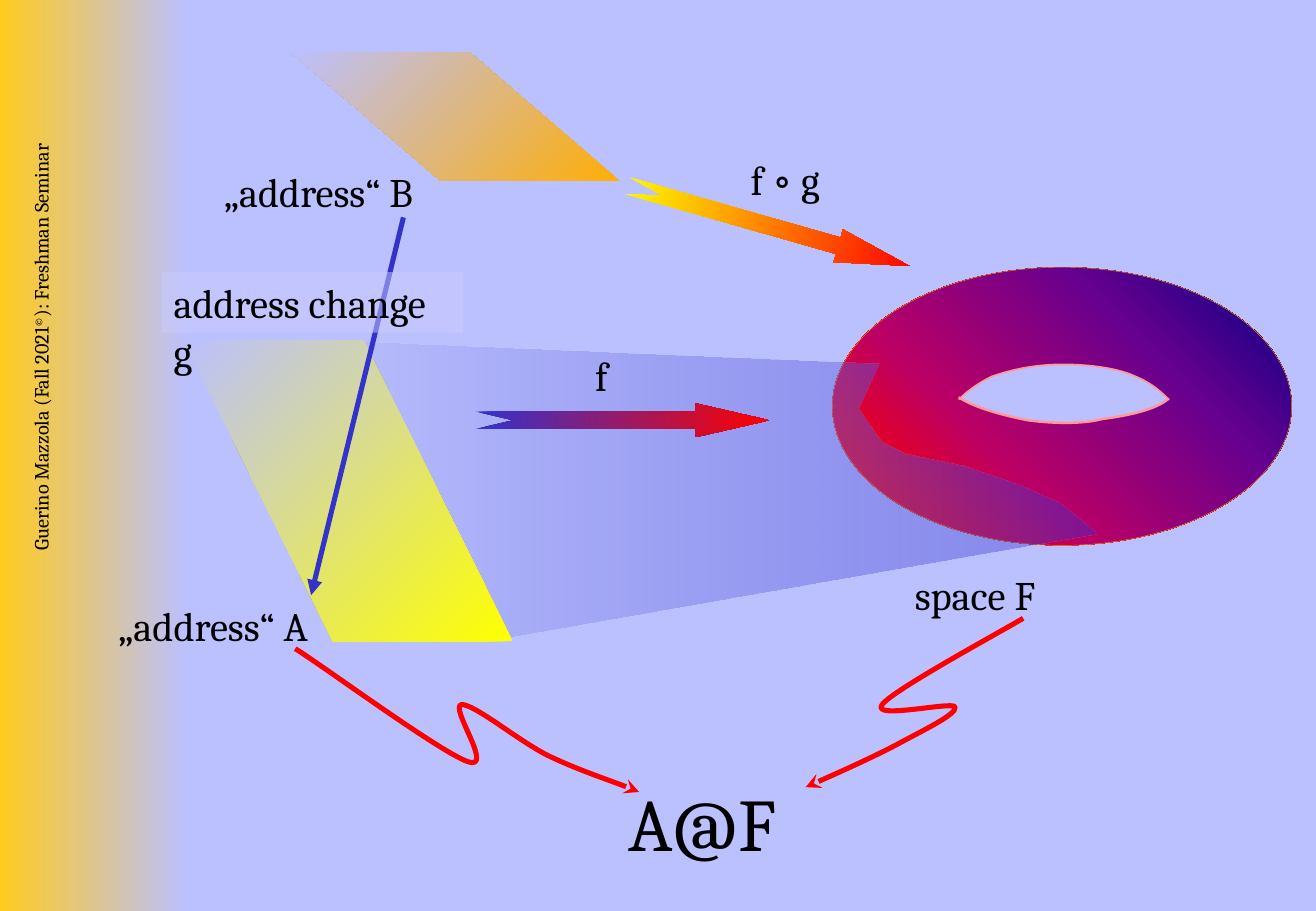
"""Build the slide on address change between addresses A and B and space F."""
from lxml import etree
from pptx import Presentation
from pptx.dml.color import RGBColor
from pptx.enum.shapes import MSO_CONNECTOR, MSO_SHAPE
from pptx.enum.text import PP_ALIGN
from pptx.oxml.ns import qn
from pptx.util import Inches, Pt

RECT, OVAL = MSO_SHAPE.RECTANGLE, MSO_SHAPE.OVAL
ARROW, PARALLELOGRAM = MSO_SHAPE.NOTCHED_RIGHT_ARROW, MSO_SHAPE.PARALLELOGRAM
STRAIGHT, RIGHT = MSO_CONNECTOR.STRAIGHT, PP_ALIGN.RIGHT
FONT, BACK = "Cambria", "BBC0FF"


def rgb(color):
    return RGBColor.from_string(color)


def paint_gradient(sp, stops, angle):
    sp.shadow.inherit = False
    sp.line.fill.background()
    sp.fill.gradient()
    sp.fill.gradient_angle = angle
    stop_list = sp._element.spPr.find(qn("a:gradFill")).find(qn("a:gsLst"))
    for old in list(stop_list):
        stop_list.remove(old)
    for position, color, alpha in stops:
        gs = etree.SubElement(stop_list, qn("a:gs"), pos=str(position * 1000))
        clr = etree.SubElement(gs, qn("a:srgbClr"), val=color)
        etree.SubElement(clr, qn("a:alpha"), val=str(alpha * 1000))


prs = Presentation()
prs.slide_width, prs.slide_height = Inches(10.83), Inches(7.5)
slide = prs.slides.add_slide(prs.slide_layouts[6])
slide.background.fill.solid()
slide.background.fill.fore_color.rgb = rgb(BACK)
shapes = slide.shapes

band = shapes.add_shape(RECT, 0, 0, Inches(1.54), prs.slide_height)
paint_gradient(band, [(0, "FFCB1F", 100), (100, BACK, 100)], 0)

credit = shapes.add_textbox(Inches(-2.39), Inches(3.66), Inches(5.65), Inches(0.5))
credit.rotation = 270
credit.text_frame.word_wrap = True
p = credit.text_frame.paragraphs[0]
p.alignment = RIGHT
for text, baseline in [("Guerino Mazzola (Fall 2021", 0), ("©", 30000), ("): Freshman Seminar", 0)]:
    r = p.add_run()
    r.text = text
    r.font.name, r.font.size, r.font.color.rgb = FONT, Pt(12), rgb("000000")
    if baseline:
        r._r.get_or_add_rPr().set("baseline", str(baseline))

torus = shapes.add_shape(OVAL, Inches(6.85), Inches(2.2), Inches(3.78), Inches(2.29))
paint_gradient(torus, [(0, "FF8200", 100), (10, "FF0000", 100), (35, "BA0066", 100),
                       (70, "66008F", 100), (100, "000082", 100)], 45)
torus.line.color.rgb, torus.line.width = rgb("FF9900"), Pt(0.25)

hole_top = [(7.89, 3.29), (7.96, 3.22), (8.04, 3.16), (8.16, 3.1),
            (8.36, 3.03), (8.55, 3), (8.75, 3), (8.92, 3), (9.14, 3.02), (9.3, 3.08),
            (9.45, 3.14), (9.52, 3.19), (9.62, 3.29)]
hole_bottom = [(7.89, 3.27), (7.99, 3.34), (8.2, 3.41), (8.46, 3.46),
               (8.6, 3.48), (8.88, 3.5), (9.07, 3.45), (9.3, 3.42), (9.52, 3.37), (9.62, 3.28)]
from_address = [(2.43, 5.34), (2.67, 5.49), (3.62, 6.19), (3.85, 6.27),
                (4.08, 6.35), (3.69, 5.81), (3.8, 5.8), (3.91, 5.8), (4.27, 6.1), (4.51, 6.22),
                (4.76, 6.34), (5.1, 6.45), (5.26, 6.52)]
from_space = [(8.42, 5.09), (8.22, 5.21), (7.35, 5.68), (7.26, 5.8),
              (7.16, 5.93), (7.84, 5.77), (7.86, 5.82), (7.88, 5.88), (7.58, 6.02), (7.38, 6.13),
              (7.17, 6.24), (6.79, 6.41), (6.63, 6.48)]
for points, fill, color, width in [
    (hole_top, BACK, "FF9999", 1),
    (hole_bottom, BACK, "FF9999", 1.5),
    (from_address, None, "FF0000", 3),
    (from_space, None, "FF0000", 3),
]:
    corners = [(Inches(x), Inches(y)) for x, y in points]
    builder = shapes.build_freeform(*corners[0])
    builder.add_line_segments(corners[1:], close=False)
    sp = builder.convert_to_shape()
    segments = list(sp._element.iter(qn("a:lnTo")))
    outline = segments[0].getparent()
    for i in range(0, len(segments), 3):
        curve = etree.SubElement(outline, qn("a:cubicBezTo"))
        for segment in segments[i:i + 3]:
            curve.append(segment[0])
            outline.remove(segment)
    sp.shadow.inherit = False
    sp.line.color.rgb, sp.line.width = rgb(color), Pt(width)
    if fill:
        sp.fill.solid()
        sp.fill.fore_color.rgb = rgb(fill)
    else:
        sp.fill.background()
        etree.SubElement(sp.line._get_or_add_ln(), qn("a:tailEnd"), type="stealth")

beam = [(2.78, 2.8), (7.23, 2.99), (7.06, 3.36), (7.25, 3.63), (7.45, 3.73), (7.92, 3.83),
        (8.39, 3.99), (8.72, 4.14), (9.03, 4.39), (4.2, 5.24), (2.53, 3.86)]
corners = [(Inches(x), Inches(y)) for x, y in beam]
builder = shapes.build_freeform(*corners[0])
builder.add_line_segments(corners[1:], close=True)
paint_gradient(builder.convert_to_shape(), [(0, BACK, 55), (100, "3333CC", 40)], 0)

for left, top, rotation, start in [(3.92, 3.32, 0, "3333CC"), (5.12, 1.72, 15.9, "FFFF00")]:
    sp = shapes.add_shape(ARROW, Inches(left), Inches(top), Inches(2.41), Inches(0.28))
    sp.rotation = rotation
    sp.adjustments[0], sp.adjustments[1] = 0.5, 2.172
    paint_gradient(sp, [(0, start, 100), (100, "FF0000", 100)], 0)

for left, top, height, slant, start in [
    (1.51, 2.8, 2.48, 0.496, "FFFF00"),
    (2.39, 0.43, 1.06, 1.166, "FFAE07"),
]:
    sp = shapes.add_shape(PARALLELOGRAM, Inches(left), Inches(top), Inches(2.71), Inches(height))
    sp.adjustments[0] = slant
    sp._element.spPr.find(qn("a:xfrm")).set("flipH", "1")
    paint_gradient(sp, [(0, start, 100), (100, BACK, 100)], 45)

change = shapes.add_connector(STRAIGHT, Inches(3.32), Inches(1.79), Inches(2.56), Inches(4.9))
change.line.color.rgb, change.line.width = rgb("3333CC"), Pt(3)
etree.SubElement(change.line._get_or_add_ln(), qn("a:tailEnd"), type="triangle")
etree.SubElement(change._element.spPr, qn("a:effectLst"))

for text, left, top, width, height, size in [
    ("space F", 7.43, 4.64, 1.2, 0.5, 24),
    ("A@F", 5.07, 6.35, 1.55, 0.83, 44),
    ("f", 4.8, 2.84, 0.31, 0.5, 24),
    ("„address“ A", 0.88, 4.9, 1.82, 0.5, 24),
    ("„address“ B", 1.75, 1.33, 1.8, 0.5, 24),
    ("address change g", 1.33, 2.24, 2.48, 0.5, 24),
    ("f ∘ g", 6.08, 1.23, 0.8, 0.51, 24),
]:
    sp = shapes.add_textbox(Inches(left), Inches(top), Inches(width), Inches(height))
    if text == "address change g":
        sp.fill.solid()
        sp.fill.fore_color.rgb = rgb("CCCCFF")
        tint = sp._element.spPr.find(qn("a:solidFill"))[0]
        etree.SubElement(tint, qn("a:alpha"), val="49000")
    tf = sp.text_frame
    tf.word_wrap = True
    r = tf.paragraphs[0].add_run()
    r.text = text
    r.font.name, r.font.size, r.font.color.rgb = FONT, Pt(size), rgb("000000")

prs.save("out.pptx")
